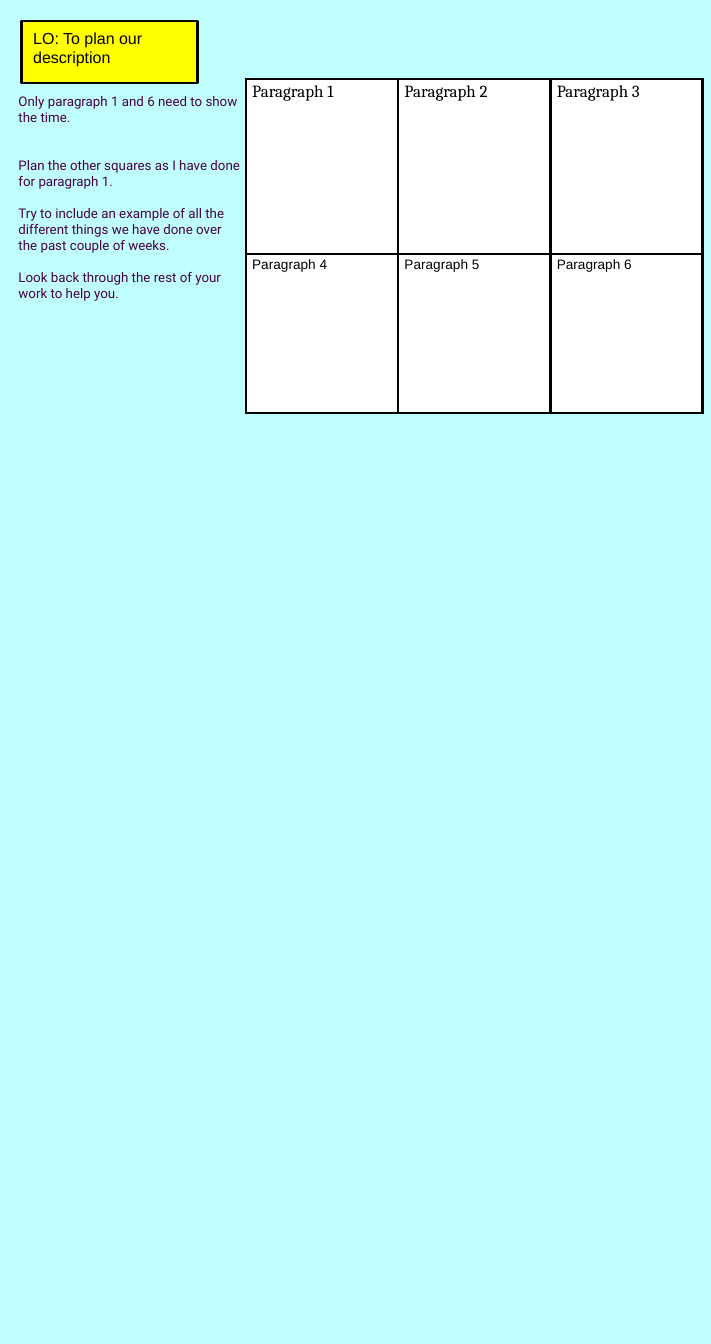
from lxml.etree import SubElement
from pptx import Presentation
from pptx.dml.color import RGBColor
from pptx.enum.shapes import MSO_SHAPE
from pptx.oxml.ns import qn
from pptx.util import Inches, Pt

AQUA = RGBColor(0xC0, 0xFF, 0xFF)
YELLOW = RGBColor(0xFF, 0xFF, 0x00)
WHITE = RGBColor(0xFF, 0xFF, 0xFF)
BLACK = RGBColor(0x00, 0x00, 0x00)
PLUM = RGBColor(0x48, 0x00, 0x48)

NOTES = [  # text, space before in points
    ("Only paragraph 1 and 6 need to show the time.", 0),
    ("Plan the other squares as I have done for paragraph 1.", 36),
    ("Try to include an example of all the different things "
     "we have done over the past couple of weeks.", 18),
    ("Look back through the rest of your work to help you.", 18),
]


def write(p, text, *, font="Arial", size=18, color=BLACK, before=0):
    p.space_before = Pt(before)
    r = p.add_run()
    r.text = text
    r.font.name = font
    r.font.size = Pt(size)
    r.font.color.rgb = color


class Sheet:
    """Places elements on a slide; lengths are percent of its width and height."""

    line_width = Pt(3)
    line_color = BLACK

    def __init__(self, prs, background):
        self.prs = prs
        self.s = prs.slides.add_slide(prs.slide_layouts[6])
        fill = self.s.background.fill
        fill.solid()
        fill.fore_color.rgb = background

    def box(self, x, y, w, h):
        width, height = self.prs.slide_width, self.prs.slide_height
        return [int(share * side / 100) for share, side in
                zip((x, y, w, h), (width, height, width, height))]

    def panel(self, place, color):
        sp = self.s.shapes.add_shape(MSO_SHAPE.RECTANGLE, *self.box(*place))
        sp.shadow.inherit = False
        sp.fill.solid()
        sp.fill.fore_color.rgb = color
        sp.line.color.rgb = self.line_color
        sp.line.width = self.line_width

    def text(self, place, paragraphs, **style):
        tf = self.s.shapes.add_textbox(*self.box(*place)).text_frame
        tf.word_wrap = True
        for i, (text, before) in enumerate(paragraphs):
            p = tf.add_paragraph() if i else tf.paragraphs[0]
            write(p, text, before=before, **style)

    def border(self, cell):
        tc_pr = cell._tc.get_or_add_tcPr()
        for side in ("lnL", "lnR", "lnT", "lnB"):
            ln = SubElement(tc_pr, qn(f"a:{side}"), w=str(self.line_width))
            solid = SubElement(ln, qn("a:solidFill"))
            SubElement(solid, qn("a:srgbClr"), val=str(self.line_color))

    def planning_table(self, place, row_shares, row_styles, columns=3):
        """Number the cells as paragraphs, with one text style per row."""
        table = self.s.shapes.add_table(
            len(row_shares), columns, *self.box(*place)).table
        for i, (share, style) in enumerate(zip(row_shares, row_styles)):
            table.rows[i].height = int(share * self.prs.slide_height / 100)
            for j in range(columns):
                cell = table.cell(i, j)
                self.border(cell)
                cell.fill.solid()
                cell.fill.fore_color.rgb = WHITE
                write(cell.text_frame.paragraphs[0],
                      f"Paragraph {i * columns + j + 1}", **style)


def main():
    prs = Presentation()
    prs.slide_width, prs.slide_height = Inches(11.11), Inches(21)
    sheet = Sheet(prs, AQUA)
    sheet.panel((3.06, 1.57, 24.75, 4.62), YELLOW)
    sheet.text((3.78, 1.9, 26.73, 3.38), [("LO: To plan our description", 0)])
    sheet.planning_table(
        (34.56, 5.9, 64.27, 24.81), (13, 11.81),
        ({"font": "Cambria", "size": 19.1}, {"size": 15.3}))
    sheet.text((1.71, 6.67, 33.03, 17.33), NOTES,
               font="Roboto", size=15, color=PLUM)
    prs.save("out.pptx")


if __name__ == "__main__":
    main()
